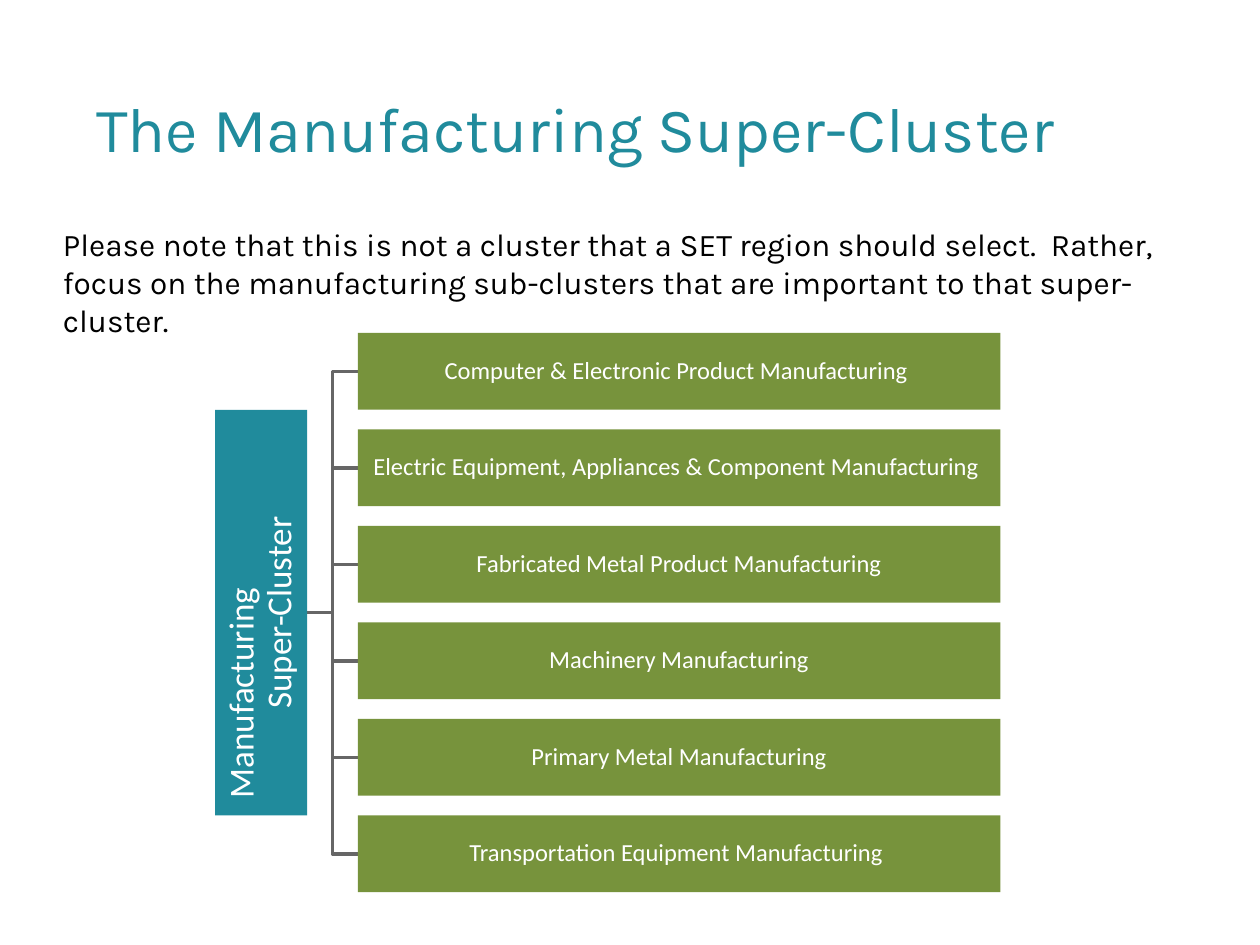
import pptx
import pptx.dml.color
import pptx.enum.shapes
import pptx.enum.text
import pptx.util

Pt = pptx.util.Pt
RGBColor = pptx.dml.color.RGBColor
Align = pptx.enum.text.PP_ALIGN
Anchor = pptx.enum.text.MSO_ANCHOR

TEAL = RGBColor(0x20, 0x8B, 0x9C)
GREEN = RGBColor(0x77, 0x93, 0x3C)
GRAY = RGBColor(0x66, 0x66, 0x66)
BLACK = RGBColor(0, 0, 0)
WHITE = RGBColor(255, 255, 255)

SUB_CLUSTERS = [
    "Computer & Electronic Product Manufacturing ",
    "Electric Equipment, Appliances & Component Manufacturing ",
    "Fabricated Metal Product Manufacturing",
    "Machinery Manufacturing",
    "Primary Metal Manufacturing",
    "Transportation Equipment Manufacturing ",
]
BAR_LEFT, BAR_TOP, BAR_WIDTH, BAR_HEIGHT, BAR_PITCH = 204.5, 190.2, 367.2, 44, 55.14
ROOT_RIGHT, ROOT_LENGTH, ROOT_THICKNESS = 175.5, 231.8, 52.5


class ClusterSlide:
    """Draws styled elements on one slide, with all lengths in points."""

    heading_font = "Karla"
    diagram_font = "Calibri"

    def __init__(self, slide):
        self.slide = slide

    def add_styled_run(self, paragraph, text, font, size, color):
        run = paragraph.add_run()
        run.text = text
        run.font.name = font
        run.font.size = Pt(size)
        run.font.color.rgb = color

    def add_text(self, left, top, width, height, text, size, color,
                 anchor=Anchor.TOP, inset=7.2, space_before=0):
        shape = self.slide.shapes.add_textbox(Pt(left), Pt(top), Pt(width), Pt(height))
        frame = shape.text_frame
        frame.word_wrap = True
        frame.vertical_anchor = anchor
        frame.margin_left = Pt(inset)
        paragraph = frame.paragraphs[0]
        paragraph.space_before = Pt(space_before)
        self.add_styled_run(paragraph, text, self.heading_font, size, color)

    def add_box(self, left, top, width, height, lines, size, fill, rotation=0):
        shape = self.slide.shapes.add_shape(
            pptx.enum.shapes.MSO_SHAPE.RECTANGLE, Pt(left), Pt(top), Pt(width), Pt(height))
        shape.shadow.inherit = False
        shape.rotation = rotation
        shape.fill.solid()
        shape.fill.fore_color.rgb = fill
        shape.line.fill.background()
        frame = shape.text_frame
        frame.word_wrap = True
        frame.vertical_anchor = Anchor.MIDDLE
        frame.margin_left = frame.margin_right = Pt(0.7)
        frame.margin_top = frame.margin_bottom = Pt(0.7)
        for index, (line, alignment, indent) in enumerate(lines):
            paragraph = frame.add_paragraph() if index else frame.paragraphs[0]
            paragraph.alignment = alignment
            paragraph.line_spacing = 0.9
            paragraph._p.get_or_add_pPr().set("marL", str(Pt(indent)))
            self.add_styled_run(paragraph, line, self.diagram_font, size, WHITE)

    def add_branch(self, start_x, start_y, end_x, end_y):
        middle_x = (start_x + end_x) / 2
        builder = self.slide.shapes.build_freeform(Pt(start_x), Pt(start_y))
        corners = [(middle_x, start_y), (middle_x, end_y), (end_x, end_y)]
        builder.add_line_segments([(Pt(x), Pt(y)) for x, y in corners], close=False)
        shape = builder.convert_to_shape()
        shape.shadow.inherit = False
        shape.fill.background()
        shape.line.color.rgb = GRAY
        shape.line.width = Pt(2)


def main():
    presentation = pptx.Presentation()
    presentation.slide_width = Pt(720)
    presentation.slide_height = Pt(540)
    page = ClusterSlide(presentation.slides.add_slide(presentation.slide_layouts[6]))

    page.add_text(48, 27.5, 648, 90, "The Manufacturing Super-Cluster", 36, TEAL, Anchor.MIDDLE)
    page.add_text(36, 125.3, 648, 356.4,
                  "Please note that this is not a cluster that a SET region should select.  "
                  "Rather, focus on the manufacturing sub-clusters that are important to that "
                  "super-cluster.", 18, BLACK, inset=0, space_before=3.6)

    tops = [BAR_TOP + index * BAR_PITCH for index in range(len(SUB_CLUSTERS))]
    center_y = (tops[0] + tops[-1] + BAR_HEIGHT) / 2
    for top in reversed(tops):
        page.add_branch(ROOT_RIGHT, center_y, BAR_LEFT, top + BAR_HEIGHT / 2)

    root_center_x = ROOT_RIGHT - ROOT_THICKNESS / 2
    page.add_box(root_center_x - ROOT_LENGTH / 2, center_y - ROOT_THICKNESS / 2,
                 ROOT_LENGTH, ROOT_THICKNESS,
                 [("Manufacturing", Align.LEFT, 9), ("Super-Cluster", Align.CENTER, 0)],
                 20, TEAL, rotation=270)
    for top, name in zip(tops, SUB_CLUSTERS):
        page.add_box(BAR_LEFT, top, BAR_WIDTH, BAR_HEIGHT, [(name, Align.CENTER, 0)], 14, GREEN)

    presentation.save("out.pptx")


if __name__ == "__main__":
    main()
